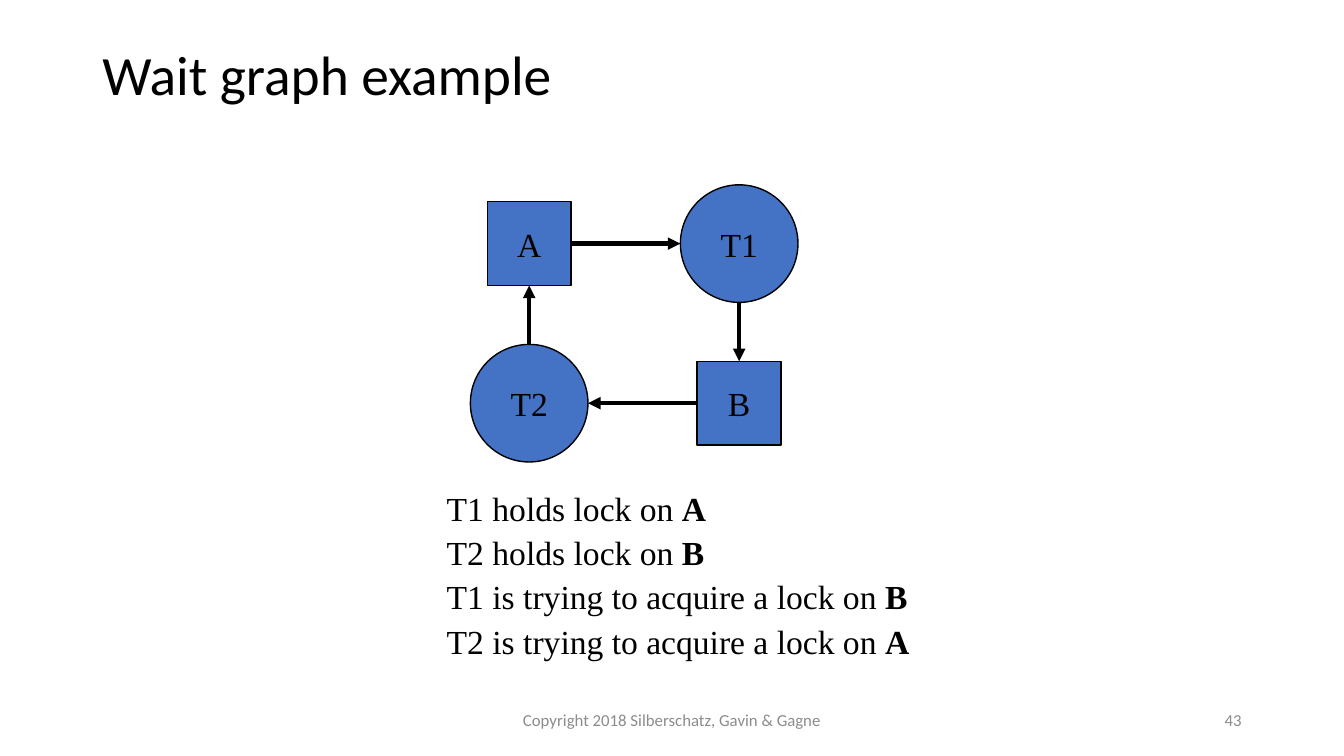
from lxml import etree
from pptx import Presentation
from pptx.dml.color import RGBColor
from pptx.enum.shapes import MSO_CONNECTOR, MSO_SHAPE
from pptx.enum.text import MSO_ANCHOR, PP_ALIGN
from pptx.oxml.ns import qn
from pptx.util import Inches, Pt

RECTANGLE, OVAL = MSO_SHAPE.RECTANGLE, MSO_SHAPE.OVAL
STRAIGHT = MSO_CONNECTOR.STRAIGHT
TOP, MIDDLE, BOTTOM = MSO_ANCHOR.TOP, MSO_ANCHOR.MIDDLE, MSO_ANCHOR.BOTTOM
LEFT, CENTER, RIGHT = PP_ALIGN.LEFT, PP_ALIGN.CENTER, PP_ALIGN.RIGHT

COLUMNS, ROWS = 160, 90
SIDES = {(0, -1): 0, (-1, 0): 1, (0, 1): 2, (1, 0): 3}


def color(code):
    return RGBColor.from_string(code)


def grid(units):
    return Inches(units / 12)


class WaitGraphPage:
    black, blue, gray = "000000", "4472C4", "8C8C8C"
    sans, serif = "Calibri", "Times New Roman"
    sizes = {RECTANGLE: 10, OVAL: 14}

    def __init__(self, deck):
        self.page = deck.slides.add_slide(deck.slide_layouts[6])

    def add_span(self, para, text, size, font, shade, bold=False):
        span = para.add_run()
        span.text = text
        span.font.size = Pt(size)
        span.font.name = font
        span.font.bold = bold
        span.font.color.rgb = color(shade)

    def add_box(self, left, top, width, height, anchor):
        box = self.page.shapes.add_textbox(*map(grid, (left, top, width, height)))
        box.text_frame.word_wrap = True
        box.text_frame.vertical_anchor = anchor
        return box.text_frame

    def add_label(self, text, area, size, shade, anchor, align):
        para = self.add_box(*area, anchor).paragraphs[0]
        para.alignment = align
        para.line_spacing = 0.9
        self.add_span(para, text, size, self.sans, shade)

    def add_node(self, name, kind, column, row):
        size = self.sizes[kind]
        node = self.page.shapes.add_shape(
            kind, grid(column - size / 2), grid(row - size / 2), grid(size), grid(size))
        node.shadow.inherit = False
        node.fill.solid()
        node.fill.fore_color.rgb = color(self.blue)
        node.line.color.rgb = color(self.black)
        node.line.width = Pt(1)
        frame = node.text_frame
        frame.word_wrap = False
        frame.vertical_anchor = MIDDLE
        para = frame.paragraphs[0]
        para.alignment = CENTER
        self.add_span(para, name, 24, self.serif, self.black)
        return node, kind, column, row

    def add_arrow(self, source, target):
        start, start_kind, x1, y1 = source
        end, end_kind, x2, y2 = target
        dx, dy = (x2 > x1) - (x2 < x1), (y2 > y1) - (y2 < y1)
        gap, reach = self.sizes[start_kind] / 2, self.sizes[end_kind] / 2
        arrow = self.page.shapes.add_connector(
            STRAIGHT, grid(x1 + dx * gap), grid(y1 + dy * gap),
            grid(x2 - dx * reach), grid(y2 - dy * reach))
        if start_kind == RECTANGLE:
            arrow.begin_connect(start, SIDES[dx, dy])
        if end_kind == RECTANGLE:
            arrow.end_connect(end, SIDES[-dx, -dy])
        arrow.line.color.rgb = color(self.black)
        arrow.line.width = Pt(3)
        etree.SubElement(arrow.line._get_or_add_ln(), qn("a:tailEnd"), type="triangle")
        etree.SubElement(arrow._element.spPr, qn("a:effectLst"))

    def add_facts(self, facts, area):
        frame = self.add_box(*area, TOP)
        for index, (text, lock) in enumerate(facts):
            para = frame.add_paragraph() if index else frame.paragraphs[0]
            para.line_spacing = 0.9
            para.space_before = Pt(5.8)
            para._p.get_or_add_pPr().set("marL", str(Inches(0.5)))
            self.add_span(para, text, 24, self.serif, self.black)
            self.add_span(para, lock, 24, self.serif, self.black, bold=True)


def main():
    deck = Presentation()
    deck.slide_width, deck.slide_height = grid(COLUMNS), grid(ROWS)
    page = WaitGraphPage(deck)
    page.add_label("Wait graph example", (11, 4.8, 138, 8.6), 39.6, page.black, BOTTOM, LEFT)

    left, right, upper, lower = 63, 88, 29, 48
    cycle = [
        page.add_node("A", RECTANGLE, left, upper),
        page.add_node("T1", OVAL, right, upper),
        page.add_node("B", RECTANGLE, right, lower),
        page.add_node("T2", OVAL, left, lower),
    ]
    for source, target in zip(cycle, cycle[1:] + cycle[:1]):
        page.add_arrow(source, target)

    page.add_facts([
        ("T1 holds lock on ", "A"),
        ("T2 holds lock on ", "B"),
        ("T1 is trying to acquire a lock on ", "B"),
        ("T2 is trying to acquire a lock on ", "A"),
    ], (46, 58, 66, 21.6))

    page.add_label("Copyright 2018 Silberschatz, Gavin & Gagne", (53, 83.4, 54, 4.8),
                   12, page.gray, MIDDLE, CENTER)
    page.add_label("43", (113, 83.4, 36, 4.8), 12, page.gray, MIDDLE, RIGHT)
    deck.save("out.pptx")


if __name__ == "__main__":
    main()
